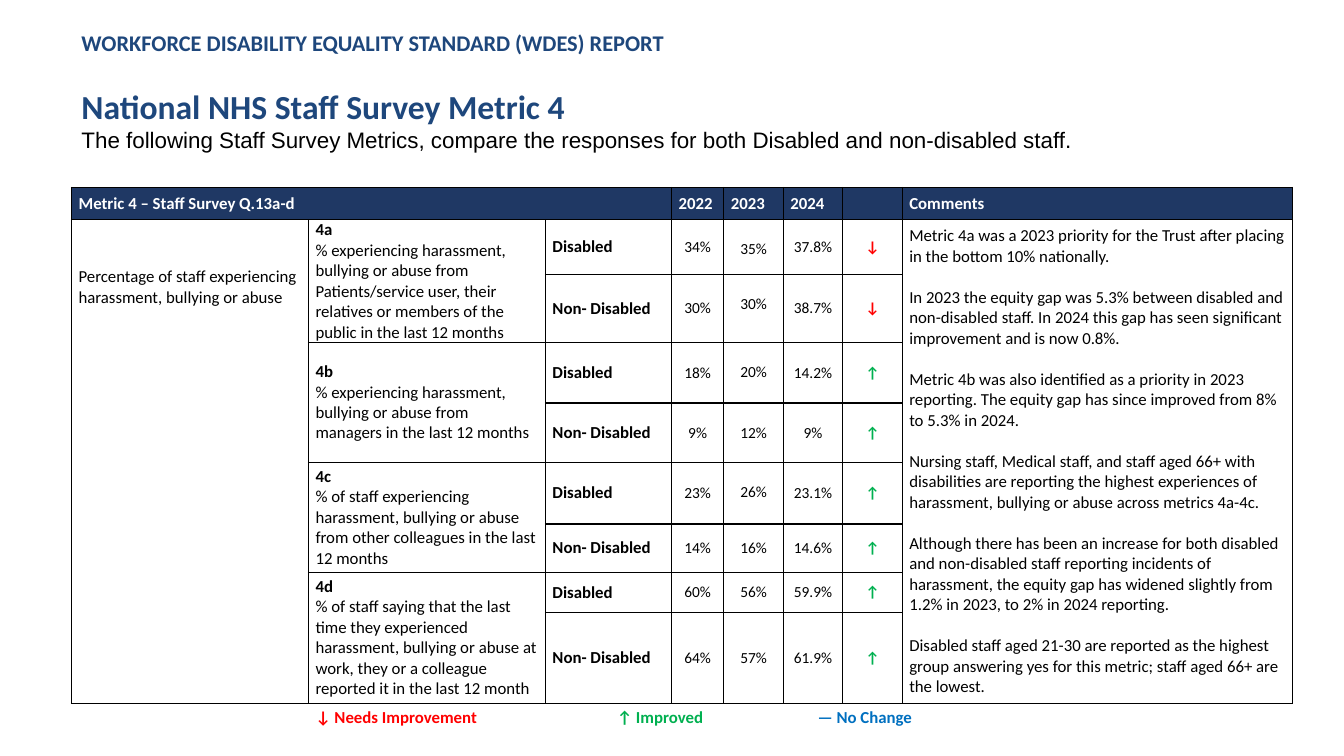
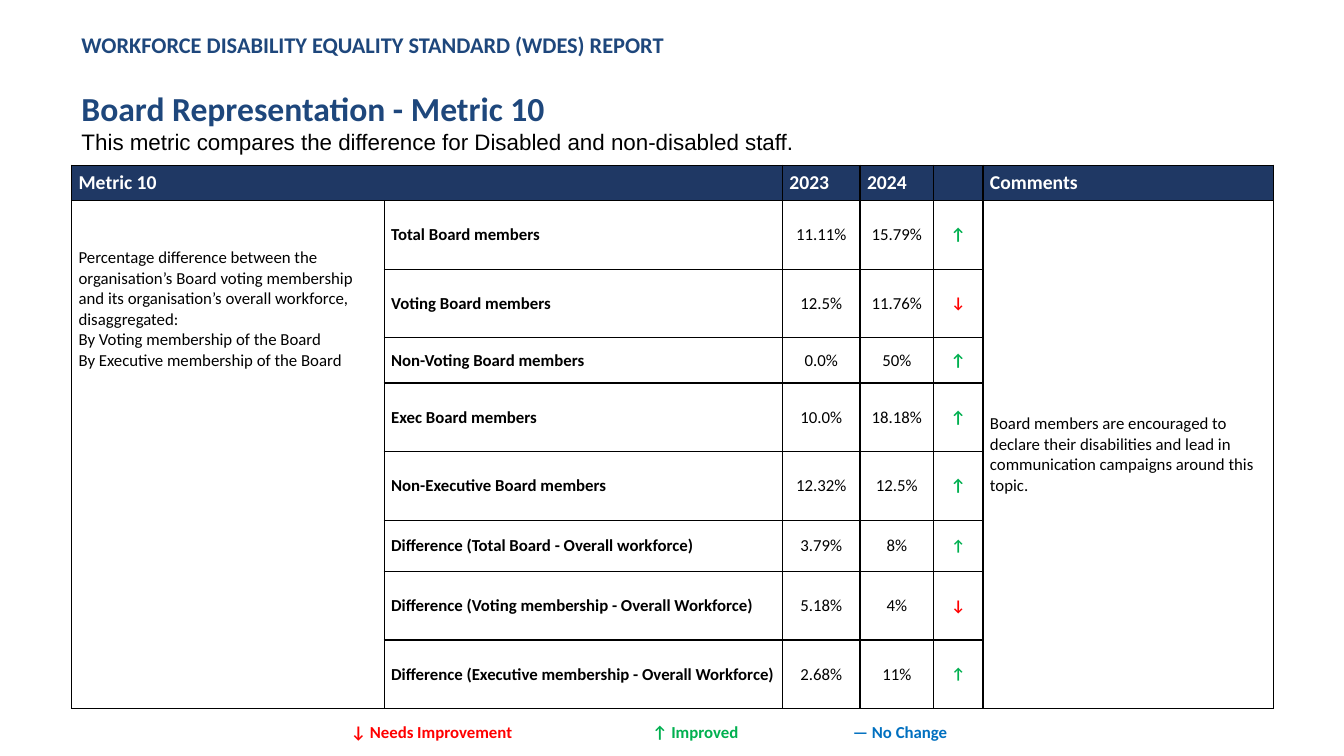
from dataclasses import dataclass

import lxml.etree
import pptx
import pptx.dml.color
import pptx.enum.text
import pptx.oxml.ns
import pptx.util

Inches = pptx.util.Inches
Pt = pptx.util.Pt
Align = pptx.enum.text.PP_ALIGN
Anchor = pptx.enum.text.MSO_ANCHOR
qn = pptx.oxml.ns.qn

COLORS = {
    "title": "1E477C", "header": "1F3864", "white": "FFFFFF", "black": "000000",
    "worse": "FF0000", "better": "00B050", "same": "0070C0",
}
ARROWS = {"worse": "↓", "better": "↑"}
REPORT = "WORKFORCE DISABILITY EQUALITY STANDARD (WDES) REPORT"
LEFT = 0.71
BLANK_LAYOUT = 6
TOPIC_TOP = 0.47    # drop of the topic text below the header row
LOWERED_TOP = 0.2   # drop of the top-anchored percentages
COMMENT_GAP = 14.65


@dataclass
class Span:
    text: str
    size: float = 12
    color: str = "black"
    bold: bool = False
    font: str = "Calibri"


@dataclass
class Result:
    height: float
    label: str
    values: list[str]
    trend: str
    trend_size: float = 12
    question: tuple[str, str] | None = None  # opens a block of two rows
    lowered: int | None = None               # value that hangs from the cell top


@dataclass
class Report:
    title: str
    subtitle: str
    heading_top: float
    table_top: float
    legend_at: tuple[float, float]
    widths: list[float]
    header_height: float
    header_size: float
    value_size: float
    metric: str
    years: list[str]
    topic: list[str]
    results: list[Result]
    comments: list[str]


def add_span(para, span: Span) -> None:
    run = para.add_run()
    run.text = span.text
    run.font.name = span.font
    run.font.size = Pt(span.size)
    run.font.bold = span.bold
    run.font.color.rgb = pptx.dml.color.RGBColor.from_string(COLORS[span.color])


def write_paras(frame, spans: list[Span], align=Align.LEFT, gap: float = 0) -> None:
    """One paragraph per span, with the gap before all but the first."""
    for index, span in enumerate(spans):
        para = frame.add_paragraph() if index else frame.paragraphs[0]
        para.alignment = align
        if index and gap:
            para.space_before = Pt(gap)
        add_span(para, span)


def add_box(page, left: float, top: float, width: float, height: float):
    box = page.shapes.add_textbox(Inches(left), Inches(top), Inches(width), Inches(height))
    box.text_frame.word_wrap = True
    return box.text_frame


def add_heading(page, report: Report) -> None:
    frame = add_box(page, LEFT, report.heading_top, 10.42, 1.38)
    write_paras(frame, [
        Span(REPORT, 16, "title", True),
        Span(report.title, 24, "title", True),
        Span(report.subtitle, 16, font="Arial"),
    ])
    frame.paragraphs[1].space_before = Pt(21.5)


def add_legend(page, left: float, top: float) -> None:
    frame = add_box(page, left, top, 6.8, 0.3)
    frame.margin_left, frame.margin_right = Inches(0.43), 0
    para = frame.paragraphs[0]
    stops = lxml.etree.SubElement(para._p.get_or_add_pPr(), qn("a:tabLst"))
    for stop in (2.99, 4.98):
        lxml.etree.SubElement(stops, qn("a:tab"), pos=str(Inches(stop)), algn="l")
    for text, color in (("↓ Needs Improvement", "worse"), ("\t↑ Improved", "better"),
                        ("\t— No Change", "same")):
        add_span(para, Span(text, 12, color, True))


def style_cell(cell, fill: str | None) -> None:
    cell.margin_left = cell.margin_right = Inches(0.07)
    cell.margin_top = cell.margin_bottom = 0
    cell.vertical_anchor = Anchor.MIDDLE
    if fill:
        cell.fill.solid()
        cell.fill.fore_color.rgb = pptx.dml.color.RGBColor.from_string(COLORS[fill])
    else:
        cell.fill.background()
    props = cell._tc.get_or_add_tcPr()
    for index, side in enumerate(("lnL", "lnR", "lnT", "lnB")):
        line = lxml.etree.Element(qn(f"a:{side}"), w=str(Pt(1)))
        solid = lxml.etree.SubElement(line, qn("a:solidFill"))
        lxml.etree.SubElement(solid, qn("a:srgbClr"), val=COLORS["black"])
        props.insert(index, line)


def hang(cell, drop: float) -> None:
    cell.vertical_anchor = Anchor.TOP
    cell.margin_top = Inches(drop)


def add_metric_table(page, report: Report) -> None:
    heights = [report.header_height] + [result.height for result in report.results]
    table = page.shapes.add_table(
        len(heights), len(report.widths), Inches(LEFT), Inches(report.table_top),
        Inches(sum(report.widths)), Inches(sum(heights))).table
    table.horz_banding = False
    for column, width in zip(table.columns, report.widths):
        column.width = Inches(width)
    for index, (row, height) in enumerate(zip(table.rows, heights)):
        row.height = Inches(height)
        for cell in row.cells:
            style_cell(cell, None if index else "header")

    # Columns: topic, [question], label, years, trend, comments
    last_row, comments_col = len(heights) - 1, len(report.widths) - 1
    trend_col = comments_col - 1
    first_year = trend_col - len(report.years)
    label_col = first_year - 1

    # Header row
    table.cell(0, 0).merge(table.cell(0, label_col))
    headers = {0: report.metric, comments_col: "Comments"}
    headers.update(enumerate(report.years, first_year))
    for col, text in headers.items():
        write_paras(table.cell(0, col).text_frame,
                    [Span(text, report.header_size, "white", True)])

    # Topic and comments run down the whole table
    for col, texts, gap in ((0, report.topic, 0),
                            (comments_col, report.comments, COMMENT_GAP)):
        cell = table.cell(1, col)
        cell.merge(table.cell(last_row, col))
        write_paras(cell.text_frame, [Span(text) for text in texts], gap=gap)
    hang(table.cell(1, 0), TOPIC_TOP)

    # Results
    for row, result in enumerate(report.results, 1):
        if result.question:
            code, wording = result.question
            cell = table.cell(row, 1)
            cell.merge(table.cell(row + 1, 1))
            write_paras(cell.text_frame, [Span(code, bold=True), Span(wording)])
        write_paras(table.cell(row, label_col).text_frame, [Span(result.label, bold=True)])
        for index, value in enumerate(result.values):
            cell = table.cell(row, first_year + index)
            write_paras(cell.text_frame, [Span(value, report.value_size)], Align.CENTER)
            if index == result.lowered:
                hang(cell, LOWERED_TOP)
        arrow = Span(ARROWS[result.trend], result.trend_size, result.trend, True)
        write_paras(table.cell(row, trend_col).text_frame, [arrow], Align.CENTER)


def survey_results() -> list[Result]:
    """Disabled and non-disabled rows for each survey question."""
    questions = [
        ("4a", "% experiencing harassment, bullying or abuse from Patients/service user, "
               "their relatives or members of the public in the last 12 months"),
        ("4b", "% experiencing harassment, bullying or abuse from managers in the last "
               "12 months"),
        ("4c", "% of staff experiencing harassment, bullying or abuse from other "
               "colleagues in the last 12 months"),
        ("4d", "% of staff saying that the last time they experienced harassment, bullying "
               "or abuse at work, they or a colleague reported it in the last 12 month"),
    ]
    heights = [0.54, 0.65, 0.6, 0.59, 0.61, 0.48, 0.4, 0.9]
    values = [
        ["34%", "35%", "37.8%"], ["30%", "30%", "38.7%"],
        ["18%", "20%", "14.2%"], ["9%", "12%", "9%"],
        ["23%", "26%", "23.1%"], ["14%", "16%", "14.6%"],
        ["60%", "56%", "59.9%"], ["64%", "57%", "61.9%"],
    ]
    return [
        Result(height, "Non- Disabled" if index % 2 else "Disabled", shares,
               "worse" if index < 2 else "better", 11,
               None if index % 2 else questions[index // 2],
               1 if index < 5 else None)
        for index, (height, shares) in enumerate(zip(heights, values))
    ]


REPORTS = [
    Report(
        title="National NHS Staff Survey Metric 4",
        subtitle="The following Staff Survey Metrics, compare the responses for both "
                 "Disabled and non-disabled staff.",
        heading_top=0.24, table_top=1.86, legend_at=(2.7, 6.96),
        widths=[2.35, 2.35, 1.25, 0.52, 0.59, 0.59, 0.59, 3.87],
        header_height=0.32, header_size=12, value_size=11,
        metric="Metric 4 – Staff Survey Q.13a-d",
        years=["2022", "2023", "2024"],
        topic=["Percentage of staff experiencing harassment, bullying or abuse"],
        results=survey_results(),
        comments=[
            "Metric 4a was a 2023 priority for the Trust after placing in the bottom 10% "
            "nationally.",
            "In 2023 the equity gap was 5.3% between disabled and non-disabled staff. In "
            "2024 this gap has seen significant improvement and is now 0.8%.",
            "Metric 4b was also identified as a priority in 2023 reporting. The equity gap "
            "has since improved from 8% to 5.3% in 2024.",
            "Nursing staff, Medical staff, and staff aged 66+ with disabilities are "
            "reporting the highest experiences of harassment, bullying or abuse across "
            "metrics 4a-4c.",
            "Although there has been an increase for both disabled and non-disabled staff "
            "reporting incidents of harassment, the equity gap has widened slightly from "
            "1.2% in 2023, to 2% in 2024 reporting.",
            "Disabled staff aged 21-30 are reported as the highest group answering yes for "
            "this metric; staff aged 66+ are the lowest.",
        ],
    ),
    Report(
        title="Board Representation - Metric 10",
        subtitle="This metric compares the difference for Disabled and non-disabled staff.",
        heading_top=0.26, table_top=1.64, legend_at=(3.05, 7.11),
        widths=[3.1, 3.95, 0.77, 0.73, 0.49, 2.88],
        header_height=0.35, header_size=14, value_size=12,
        metric="Metric 10",
        years=["2023", "2024"],
        topic=[
            "Percentage difference between the organisation’s Board voting membership and "
            "its organisation’s overall workforce, disaggregated:",
            "By Voting membership of the Board",
            "By Executive membership of the Board",
        ],
        results=[
            Result(0.68, "Total Board members", ["11.11%", "15.79%"], "better"),
            Result(0.68, "Voting Board members", ["12.5%", "11.76%"], "worse", 11),
            Result(0.45, "Non-Voting Board members", ["0.0%", "50%"], "better"),
            Result(0.68, "Exec Board members", ["10.0%", "18.18%"], "better"),
            Result(0.68, "Non-Executive Board members", ["12.32%", "12.5%"], "better"),
            Result(0.51, "Difference (Total Board - Overall workforce)",
                   ["3.79%", "8%"], "better", 11),
            Result(0.68, "Difference (Voting membership - Overall Workforce)",
                   ["5.18%", "4%"], "worse", 11),
            Result(0.68, "Difference (Executive membership - Overall Workforce)",
                   ["2.68%", "11%"], "better", 11),
        ],
        comments=["Board members are encouraged to declare their disabilities and lead in "
                  "communication campaigns around this topic."],
    ),
]


def main() -> None:
    deck = pptx.Presentation()
    deck.slide_width, deck.slide_height = Inches(13.33), Inches(7.5)
    for report in REPORTS:
        page = deck.slides.add_slide(deck.slide_layouts[BLANK_LAYOUT])
        add_metric_table(page, report)
        add_heading(page, report)
        add_legend(page, *report.legend_at)
    deck.save("out.pptx")


if __name__ == "__main__":
    main()
